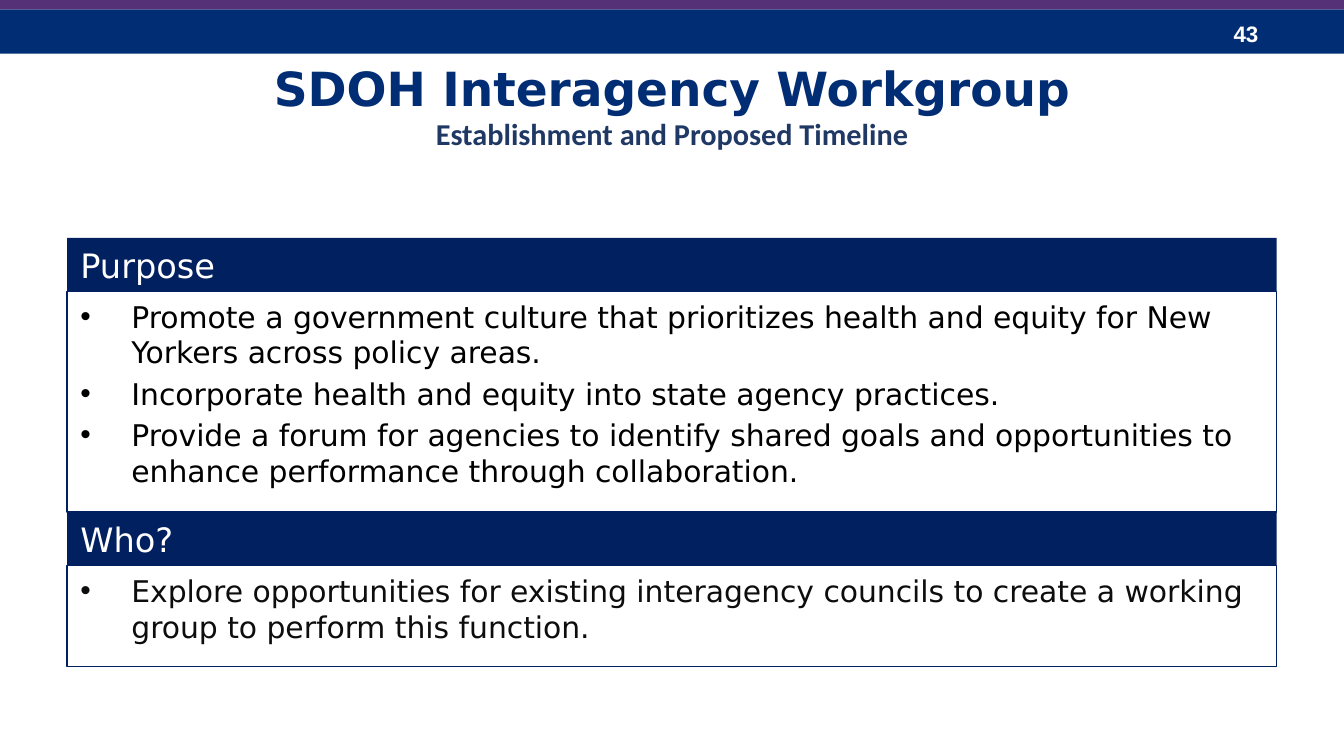
from lxml.etree import SubElement as sub_el
from pptx import Presentation
from pptx.dml.color import RGBColor
from pptx.enum.shapes import MSO_SHAPE as Shape
from pptx.enum.text import MSO_ANCHOR as Anchor, PP_ALIGN as Align
from pptx.oxml.ns import qn
from pptx.util import Inches, Pt

WIDE = 10
HIGH = WIDE * 9 / 16
EDGE = 0.5
HEAD = 0.4  # height of a section heading
NAVY, DARK, PLUM = "002D73", "002060", "553278"
WHITE, SANS = "FFFFFF", "DejaVu Sans"

PARTS = [  # heading, top, height, text colour, bullets
    ("Purpose", 1.77, 2.04, "000000", [
        "Promote a government culture that prioritizes health and equity "
        "for New Yorkers across policy areas.",
        "Incorporate health and equity into state agency practices.",
        "Provide a forum for agencies to identify shared goals and "
        "opportunities to enhance performance through collaboration."]),
    ("Who?", 3.81, 1.15, "0D0D0D", [
        "Explore opportunities for existing interagency councils to create "
        "a working group to perform this function."]),
]


def tint(code):
    return RGBColor.from_string(code)


def style(font, name, size, color, bold=False):
    font.name, font.size, font.bold = name, Pt(size), bold
    font.color.rgb = tint(color)


def block(slide, box, fill=None, line=None):
    shape = slide.shapes.add_shape(Shape.RECTANGLE, *map(Inches, box))
    shape.shadow.inherit = False
    if fill:
        shape.fill.solid()
        shape.fill.fore_color.rgb = tint(fill)
    else:
        shape.fill.background()
    if line:
        shape.line.color.rgb = tint(line)
        shape.line.width = Pt(0.75)
    else:
        shape.line.fill.background()
    return shape


def bullet(para):
    props = para._p.get_or_add_pPr()
    props.set("marL", str(Inches(0.38)))
    props.set("indent", str(-Inches(0.38)))
    sub_el(props, qn("a:buFont")).set("typeface", "Arial")
    sub_el(props, qn("a:buChar")).set("char", "•")


def banner(slide, box, page):
    x, y, w, h = box
    block(slide, (x, y + 0.09, w, h - 0.09), NAVY)
    # Page number
    spot = (x + 9.08, y + 0.12, 0.75, 0.3)
    frame = slide.shapes.add_textbox(*map(Inches, spot)).text_frame
    frame.word_wrap = True
    frame.vertical_anchor = Anchor.MIDDLE
    frame.text = page
    style(frame.paragraphs[0].font, "Arial", 12, WHITE, True)
    # Accent strip
    block(slide, (x, y, w, 0.09), PLUM)


def title(slide, box, main, sub):
    shape = slide.shapes.title
    shape.left, shape.top, shape.width, shape.height = map(Inches, box)
    frame = shape.text_frame
    frame.word_wrap = True
    frame.vertical_anchor = Anchor.MIDDLE
    para = frame.paragraphs[0]
    para.alignment = Align.CENTER
    run = para.add_run()
    run.text = main
    style(run.font, SANS, 25.2, NAVY, True)
    para.add_line_break()
    run = para.add_run()
    run.text = sub
    style(run.font, "Calibri", 16.2, "1F3864", True)


def section(slide, box, name, color, items):
    x, y, w, h = box
    # Outlined body with bullets
    body = block(slide, (x, y + HEAD, w, h - HEAD), line=DARK).text_frame
    body.word_wrap = True
    body.vertical_anchor = Anchor.TOP
    for i, item in enumerate(items):
        para = body.add_paragraph() if i else body.paragraphs[0]
        para.text = item
        para.alignment = Align.LEFT
        para.space_before = Pt(3 if i else 0)
        bullet(para)
        style(para.font, SANS, 16, color)
    # Filled heading
    head = block(slide, (x, y, w, HEAD), DARK).text_frame
    head.word_wrap = True
    head.vertical_anchor = Anchor.MIDDLE
    head.text = name
    head.paragraphs[0].alignment = Align.LEFT
    style(head.paragraphs[0].font, SANS, 18, WHITE)


def main():
    deck = Presentation()
    deck.slide_width, deck.slide_height = Inches(WIDE), Inches(HIGH)
    slide = deck.slides.add_slide(deck.slide_layouts[5])
    span = WIDE - 2 * EDGE
    banner(slide, (0, -0.02, WIDE, 0.42), "43")
    title(slide, (EDGE, 0.4, span, 0.77), "SDOH Interagency Workgroup",
          "Establishment and Proposed Timeline")
    for name, top, tall, color, items in PARTS:
        section(slide, (EDGE, top, span, tall), name, color, items)
    deck.save("out.pptx")


if __name__ == "__main__":
    main()
